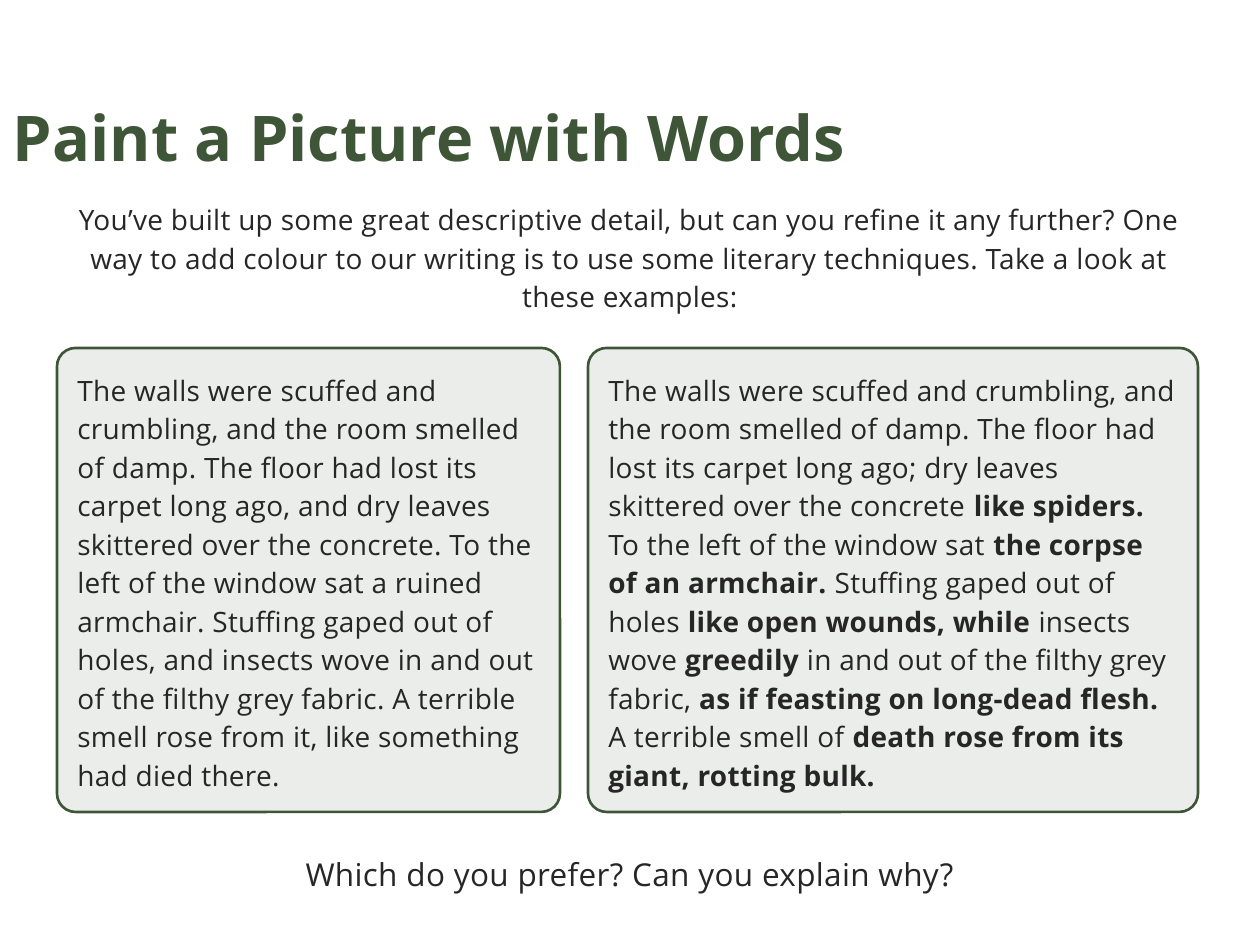
import pptx
import pptx.util
import pptx.dml.color
import pptx.enum.shapes
import pptx.enum.text
import pptx.oxml.ns
import lxml.etree

SCALE = 914400 / 126
THEME = {
    "font": "Open Sans",
    "green": pptx.dml.color.RGBColor.from_string("3E5538"),
    "ink": pptx.dml.color.RGBColor.from_string("262626"),
    "title": 36,
    "body": 16,
    "ask": 18,
}
ALIGN = pptx.enum.text.PP_ALIGN
ANCHOR = pptx.enum.text.MSO_ANCHOR


def px(num):
    return pptx.util.Emu(round(num * SCALE))


def write(shape, text, size=THEME["body"], color=THEME["ink"], bold=False,
          align=ALIGN.LEFT, anchor=ANCHOR.TOP, inset=(0, 6), line=22, after=6, track=20):
    frame = shape.text_frame
    frame.word_wrap = True
    frame.vertical_anchor = anchor
    frame.margin_left = frame.margin_right = px(inset[0])
    frame.margin_top = frame.margin_bottom = px(inset[1])
    para = frame.paragraphs[0]
    para.alignment = align
    para.space_after = pptx.util.Pt(after)
    if line:
        para.line_spacing = pptx.util.Pt(line)
    for num, part in enumerate(text.split("**")):
        if not part:
            continue
        run = para.add_run()
        run.text = part
        run.font.name = THEME["font"]
        run.font.size = pptx.util.Pt(size)
        run.font.bold = bold or num % 2 == 1
        run.font.color.rgb = color
        if track:
            run.font._element.set("spc", str(track))


deck = pptx.Presentation()
deck.slide_width = px(1260)
deck.slide_height = px(945)
slide = deck.slides.add_slide(deck.slide_layouts[6])

title = slide.shapes.add_textbox(px(0), px(93), px(1260), px(86))
write(title, "Paint a Picture with Words", size=THEME["title"], color=THEME["green"],
      bold=True, anchor=ANCHOR.MIDDLE, inset=(13, 6), line=None, after=0, track=0)

intro = slide.shapes.add_textbox(px(59), px(192), px(1142), px(127))
write(intro, "You’ve built up some great descriptive detail, but can you refine it any "
      "further? One way to add colour to our writing is to use some literary techniques. "
      "Take a look at these examples:", align=ALIGN.CENTER)

plain = (
    "The walls were scuffed and crumbling, and the room smelled of damp. The floor had "
    "lost its carpet long ago, and dry leaves skittered over the concrete. To the left of "
    "the window sat a ruined armchair. Stuffing gaped out of holes, and insects wove in "
    "and out of the filthy grey fabric. A terrible smell rose from it, like something had "
    "died there."
)
vivid = (
    "The walls were scuffed and crumbling, and the room smelled of damp. The floor had "
    "lost its carpet long ago; dry leaves skittered over the concrete **like spiders.** "
    "To the left of the window sat **the corpse of an armchair.** Stuffing gaped out of "
    "holes **like open wounds, while** insects wove **greedily** in and out of the filthy "
    "grey fabric, **as if feasting on long-dead flesh. **A terrible smell of **death rose "
    "from its giant, rotting bulk.**"
)
for left, width, text in ((57, 503, plain), (588, 610, vivid)):
    card = slide.shapes.add_shape(pptx.enum.shapes.MSO_SHAPE.ROUNDED_RECTANGLE,
                                  px(left), px(348), px(width), px(464))
    card.adjustments[0] = 0.04
    card.shadow.inherit = False
    card.fill.solid()
    card.fill.fore_color.rgb = THEME["green"]
    tint = card.fill._xPr.find(".//" + pptx.oxml.ns.qn("a:srgbClr"))
    lxml.etree.SubElement(tint, pptx.oxml.ns.qn("a:alpha"), val="10000")
    card.line.color.rgb = THEME["green"]
    card.line.width = pptx.util.Pt(1.5)
    write(card, text, anchor=ANCHOR.MIDDLE, inset=(15, 15))

ask = slide.shapes.add_textbox(px(302), px(847), px(656), px(52))
write(ask, "Which do you prefer? Can you explain why?", size=THEME["ask"],
      align=ALIGN.CENTER, line=23)

deck.save("out.pptx")
